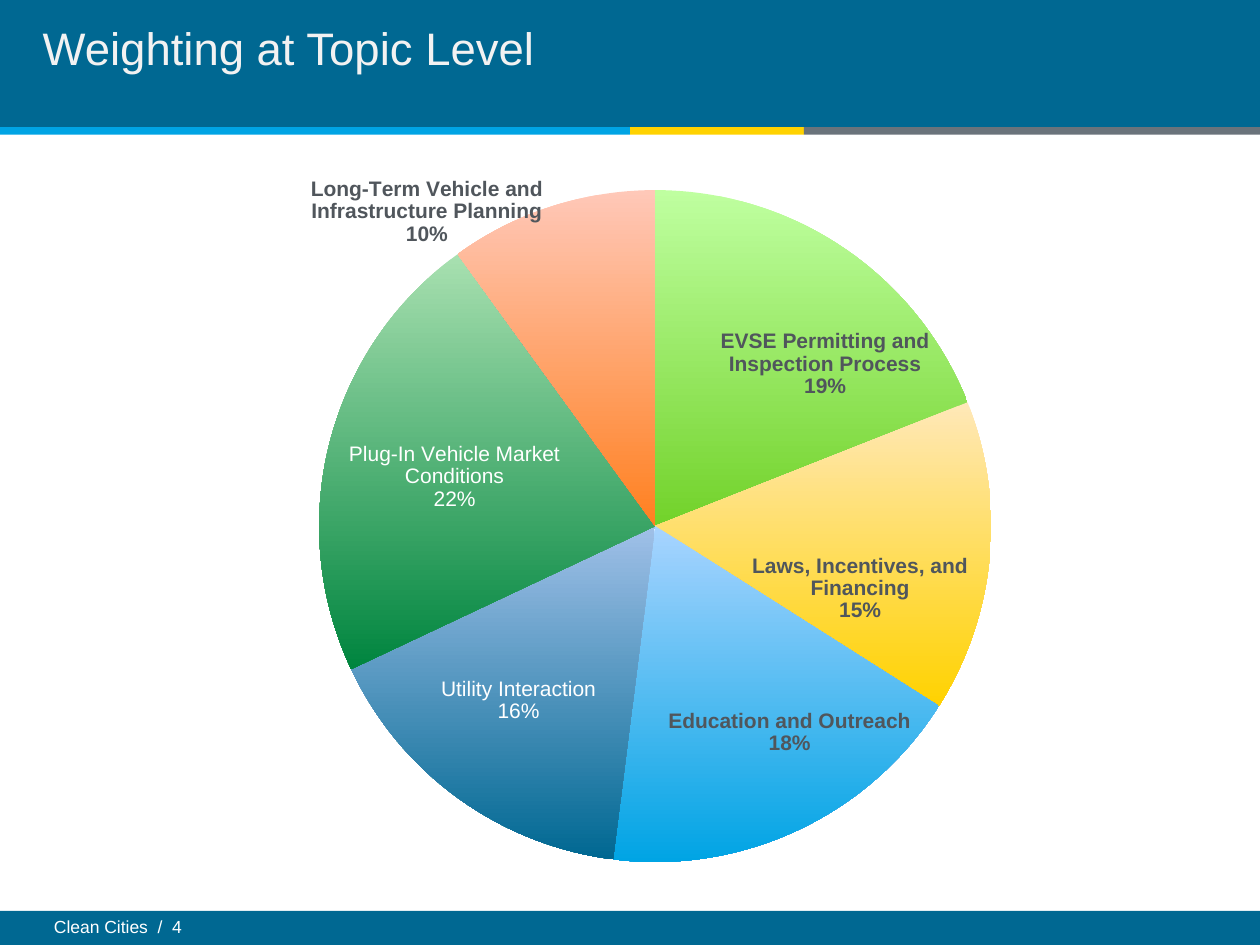
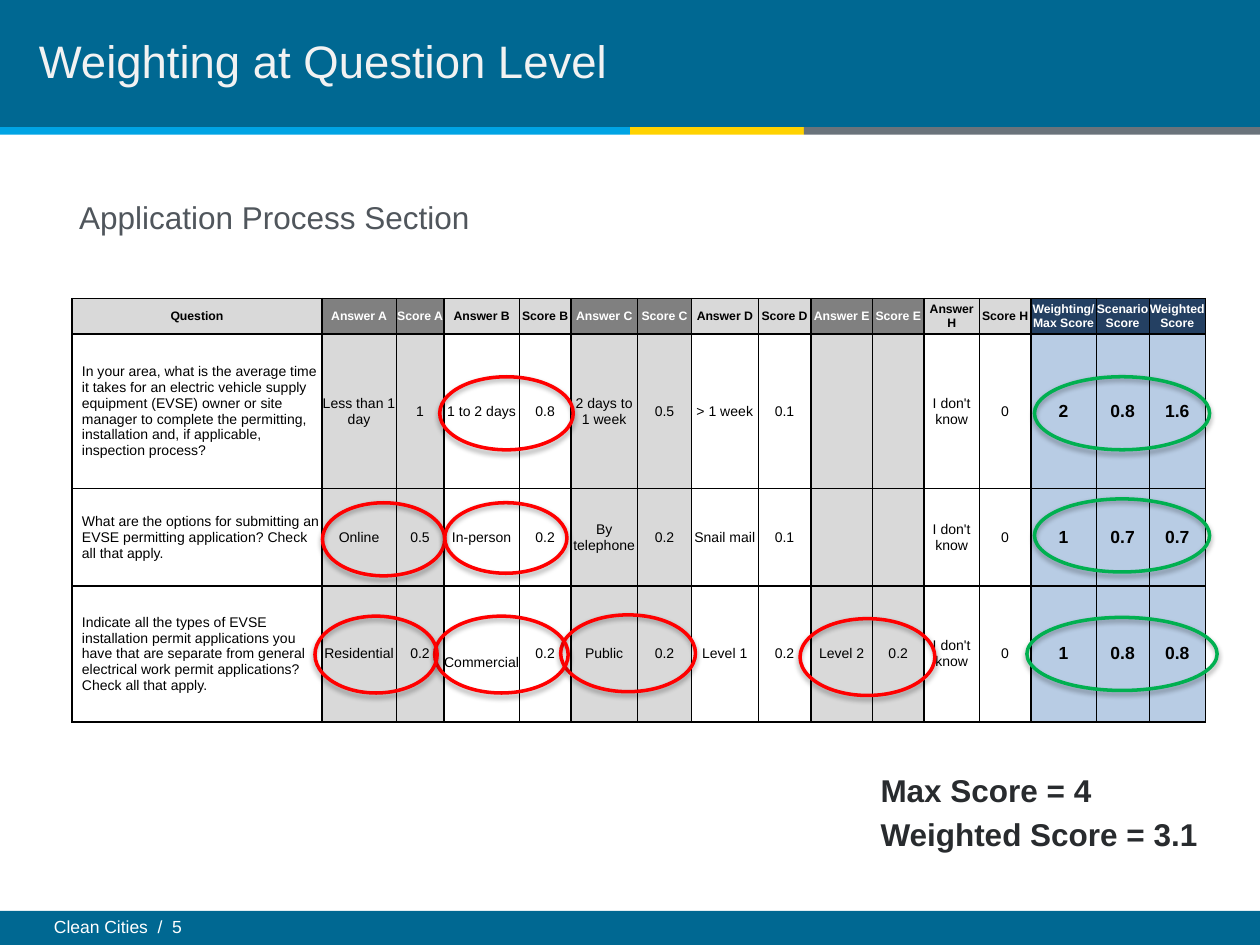
from lxml.etree import SubElement
from pptx import Presentation
from pptx.chart.data import CategoryChartData
from pptx.dml.color import RGBColor
from pptx.enum.chart import XL_CHART_TYPE, XL_LABEL_POSITION
from pptx.enum.shapes import MSO_SHAPE
from pptx.enum.text import MSO_ANCHOR, PP_ALIGN
from pptx.oxml import parse_xml
from pptx.oxml.ns import nsdecls, qn
from pptx.util import Inches, Pt

WIDTH, HEIGHT = Inches(10), Inches(7.5)
COL, ROW = WIDTH / 100, HEIGHT / 75

TEAL = RGBColor(0x00, 0x68, 0x92)
SKY = RGBColor(0x00, 0xA4, 0xE4)
YELLOW = RGBColor(0xFF, 0xD2, 0x00)
SLATE = RGBColor(0x6A, 0x73, 0x7B)
WHITE = RGBColor(0xFF, 0xFF, 0xFF)
BLACK = RGBColor(0x00, 0x00, 0x00)
TITLE_GREY = RGBColor(0xF2, 0xF2, 0xF2)
TEXT_GREY = RGBColor(0x50, 0x56, 0x5C)
DARK_GREY = RGBColor(0x28, 0x2B, 0x2E)
LIGHT_CELL = RGBColor(0xD9, 0xD9, 0xD9)
MID_CELL = RGBColor(0x80, 0x80, 0x80)
NAVY = RGBColor(0x24, 0x40, 0x62)
PALE_BLUE = RGBColor(0xB8, 0xCC, 0xE4)
RED = RGBColor(0xFF, 0x00, 0x00)
GREEN = RGBColor(0x00, 0xB0, 0x50)
LIME_TOP, LIME = RGBColor(0xBF, 0xFF, 0xA0), RGBColor(0x72, 0xD2, 0x2A)
SAND_TOP = RGBColor(0xFF, 0xE8, 0xB8)
SKY_TOP = RGBColor(0xA8, 0xD4, 0xFF)
TEAL_TOP = RGBColor(0xA0, 0xC0, 0xE8)
FOREST_TOP, FOREST = RGBColor(0xA8, 0xE0, 0xB0), RGBColor(0x00, 0x85, 0x3F)
ORANGE_TOP, ORANGE = RGBColor(0xFF, 0xC8, 0xB8), RGBColor(0xFF, 0x80, 0x20)

TOPICS = [
    ("EVSE Permitting and Inspection Process", 19, LIME_TOP, LIME, TEXT_GREY, (0.06, -0.03)),
    ("Laws, Incentives, and Financing", 15, SAND_TOP, YELLOW, TEXT_GREY, (0.03, 0.06)),
    ("Education and Outreach", 18, SKY_TOP, SKY, TEXT_GREY, (0.05, 0.07)),
    ("Utility Interaction", 16, TEAL_TOP, TEAL, WHITE, (-0.03, 0.05)),
    ("Plug-In Vehicle Market Conditions", 22, FOREST_TOP, FOREST, WHITE, (-0.03, -0.01)),
    ("Long-Term Vehicle and Infrastructure Planning", 10, ORANGE_TOP, ORANGE, TEXT_GREY,
     (-0.14, -0.2)),
]

COLUMN_WIDTHS = [19.9, 5.9, 3.8, 6, 4.1, 5.3, 4.3, 5.3, 4.2, 4.9, 4.1, 4.4, 4.1, 5.2, 4.2, 4.5]
ROW_HEIGHTS = [2.8, 12.3, 7.7, 10.8]
HEADINGS = ["Question"] + [f"{kind} {letter}" for letter in "ABCDEH" for kind in ("Answer", "Score")]
HEADINGS += ["Weighting/ Max Score", "Scenario Score", "Weighted Score"]
QUESTIONS = [
    ["In your area, what is the average time it takes for an electric vehicle supply equipment "
     "(EVSE) owner or site manager to complete the permitting, installation and, if applicable, "
     "inspection process?",
     "Less than 1 day", "1", "1 to 2 days", "0.8", "2 days to 1 week", "0.5", "> 1 week", "0.1",
     "", "", "I don't know", "0", "2", "0.8", "1.6"],
    ["What are the options for submitting an EVSE permitting application? Check all that apply.",
     "Online", "0.5", "In-person", "0.2", "By telephone", "0.2", "Snail mail", "0.1",
     "", "", "I don't know", "0", "1", "0.7", "0.7"],
    ["Indicate all the types of EVSE installation permit applications you have that are separate "
     "from general electrical work permit applications? Check all that apply.",
     "Residential", "0.2", "Commercial", "0.2", "Public", "0.2", "Level 1", "0.2",
     "Level 2", "0.2", "I don't know", "0", "1", "0.8", "0.8"],
]
SHADED_COLUMNS = {1, 2, 5, 6, 9, 10}
FIRST_RESULT = 13
THIN_LEFT = {2, 4, 6, 8, 10, 12, 14, 15}
THIN_TOP = {2}
LOWERED_CELL = (3, 3)

ANSWER_RINGS = [(19.9, 16.2, 9.7, 5.8), (29.2, 6.2, 10.6, 5.8), (29.6, 16.2, 9.7, 5.6),
                (38.8, 25.1, 10.7, 6.1), (28.8, 25.2, 10.6, 6.1), (57.8, 25.4, 10.7, 6.1),
                (19.3, 25.2, 9.7, 6.1)]
RESULT_RINGS = [(76.4, 6.2, 13.9, 5.8), (76.4, 15.9, 13.9, 5.8), (75.8, 25.3, 15.1, 5.8)]


def place(box):
    """Turn a box in columns and rows into slide lengths."""
    x, y, w, h = box
    return round(x * COL), round(y * ROW), round(w * COL), round(h * ROW)


def add_run(p, text, size, color, bold=False):
    """Add one Arial run to a paragraph."""
    r = p.add_run()
    r.text = text
    font = r.font
    font.name, font.size, font.bold = "Arial", Pt(size), bold
    font.color.rgb = color


def add_text(s, box, lines, size, color, bold=False, anchor=MSO_ANCHOR.TOP, spacing=None):
    """Place a text box with one paragraph per line."""
    tf = s.shapes.add_textbox(*place(box)).text_frame
    tf.word_wrap, tf.vertical_anchor = True, anchor
    for i, line in enumerate(lines):
        p = tf.paragraphs[0] if i == 0 else tf.add_paragraph()
        if i:
            p.space_before = Pt(size * 0.2)
        p.line_spacing = spacing
        add_run(p, line, size, color, bold)


def add_band(s, box, color):
    """Place a plain filled rectangle."""
    sp = s.shapes.add_shape(MSO_SHAPE.RECTANGLE, *place(box))
    sp.shadow.inherit = False
    sp.fill.solid()
    sp.fill.fore_color.rgb = color
    sp.line.fill.background()


def add_frame(prs, number, title, title_box):
    """Start a slide with its bands, footer and title."""
    s = prs.slides.add_slide(prs.slide_layouts[6])
    add_band(s, (0, 0, 100, 10.1), TEAL)
    add_band(s, (0, 72.3, 100, 2.7), TEAL)
    add_text(s, (3.3, 72.4, 77.8, 2.6), [f"Clean Cities  /  {number}"], 10, WHITE, spacing=0.9)
    left = 0
    for width, color in ((50, SKY), (13.8, YELLOW), (36.2, SLATE)):
        add_band(s, (left, 10.1, width, 0.6), color)
        left += width
    add_text(s, title_box, [title], 26, TITLE_GREY, anchor=MSO_ANCHOR.MIDDLE, spacing=Pt(28))
    return s


def manual_layout(**values):
    """Build a chart layout element from its settings."""
    layout = parse_xml(f"<c:layout {nsdecls('c')}><c:manualLayout/></c:layout>")
    for name, value in values.items():
        SubElement(layout[0], qn(f"c:{name}")).set("val", str(value))
    return layout


def style_slice(point, top, bottom, label_color):
    """Give a slice its gradient and its label font."""
    fill = point.format.fill
    fill.gradient()
    fill.gradient_angle = 270
    for stop, color in zip(fill.gradient_stops, (top, bottom)):
        stop.color.rgb = color
    label = point.data_label
    font = label.font
    font.name, font.size, font.bold = "Arial", Pt(12), label_color != WHITE
    font.color.rgb = label_color
    label.position = XL_LABEL_POSITION.CENTER


def add_topic_pie(s, box):
    """Draw the pie of topic weights."""
    data = CategoryChartData()
    data.categories = [topic[0] for topic in TOPICS]
    data.add_series("Series 1", [topic[1] for topic in TOPICS])
    chart = s.shapes.add_chart(XL_CHART_TYPE.PIE, *place(box), data).chart
    chart.has_title = chart.has_legend = False
    chart.font.name, chart.font.size = "Arial", Pt(10)
    chart.font.color.rgb = TEXT_GREY
    area = chart._chartSpace.chart.plotArea
    for old in area.findall(qn("c:layout")):
        area.remove(old)
    area.insert(0, manual_layout(layoutTarget="inner", xMode="edge", yMode="edge",
                                 x=0.24, y=0.07, w=0.56, h=0.87))
    series = chart.plots[0].series[0]
    for i, (_, _, top, bottom, label_color, _) in enumerate(TOPICS):
        style_slice(series.points[i], top, bottom, label_color)
    for label, topic in zip(series._element.xpath(".//c:dLbl"), TOPICS):
        dx, dy = topic[-1]
        label.insert(1, manual_layout(x=dx, y=dy))
        for flag, value in (("showVal", "0"), ("showCatName", "1"), ("showPercent", "1")):
            label.find(qn(f"c:{flag}")).set("val", value)
        SubElement(label, qn("c:separator")).text = "\n"
    for leader in series._element.xpath(".//c:showLeaderLines"):
        leader.set("val", "0")


def cell_style(row, col):
    """Return fill, text colour, size and boldness of a cell."""
    shaded, result = col in SHADED_COLUMNS, col >= FIRST_RESULT
    if row == 0:
        fill = NAVY if result else MID_CELL if shaded else LIGHT_CELL
        return fill, WHITE if shaded or result else BLACK, 7, True
    fill = PALE_BLUE if result else LIGHT_CELL if shaded else WHITE
    return fill, BLACK, 10 if result else 8, result


def add_borders(cell, row, col):
    """Draw the four black borders of a cell."""
    thin = {"lnL": col in THIN_LEFT, "lnR": col + 1 in THIN_LEFT,
            "lnT": row in THIN_TOP, "lnB": row + 1 in THIN_TOP}
    props = cell._tc.get_or_add_tcPr()
    for i, (side, is_thin) in enumerate(thin.items()):
        props.insert(i, parse_xml(
            f'<a:{side} {nsdecls("a")} w="{Pt(0.5 if is_thin else 1)}"><a:solidFill>'
            f'<a:srgbClr val="{BLACK}"/></a:solidFill></a:{side}>'))


def add_question_table(s, box):
    """Build the table of answers and scores."""
    table = s.shapes.add_table(len(ROW_HEIGHTS), len(COLUMN_WIDTHS), *place(box)).table
    table.first_row = table.horz_banding = False
    scale = box[2] / sum(COLUMN_WIDTHS)
    for column, width in zip(table.columns, COLUMN_WIDTHS):
        column.width = round(width * scale * COL)
    for table_row, height in zip(table.rows, ROW_HEIGHTS):
        table_row.height = round(height * ROW)
    for row, texts in enumerate([HEADINGS] + QUESTIONS):
        for col, text in enumerate(texts):
            cell = table.cell(row, col)
            question = row > 0 and col == 0
            fill, color, size, bold = cell_style(row, col)
            cell.margin_left = Inches(0.08) if question else 0
            cell.margin_right = cell.margin_bottom = 0
            cell.margin_top = Inches(0.13) if (row, col) == LOWERED_CELL else 0
            cell.vertical_anchor = MSO_ANCHOR.MIDDLE
            cell.fill.solid()
            cell.fill.fore_color.rgb = fill
            add_borders(cell, row, col)
            p = cell.text_frame.paragraphs[0]
            p.alignment = PP_ALIGN.LEFT if question else PP_ALIGN.CENTER
            if text:
                add_run(p, text, size, color, bold)


def add_rings(s, table_box, rings, color):
    """Circle parts of the table with shadowed ellipses."""
    for x, y, w, h in rings:
        sp = s.shapes.add_shape(MSO_SHAPE.OVAL,
                                *place((table_box[0] + x, table_box[1] + y, w, h)))
        sp.fill.background()
        sp.line.color.rgb, sp.line.width = color, Pt(2)
        sp._element.spPr.append(parse_xml(
            f'<a:effectLst {nsdecls("a")}><a:outerShdw blurRad="{Pt(3.1)}" dist="{Pt(1.8)}" '
            f'dir="5400000" rotWithShape="0"><a:srgbClr val="{BLACK}"><a:alpha val="35000"/>'
            '</a:srgbClr></a:outerShdw></a:effectLst>'))


def build_topic_slide(prs):
    """Build the slide on topic weights."""
    s = add_frame(prs, 4, "Weighting at Topic Level", (2.4, 0.8, 88.5, 6.4))
    add_topic_pie(s, (0, 10.8, 100, 61.3))


def build_question_slide(prs):
    """Build the slide on question weights."""
    s = add_frame(prs, 5, "Weighting at Question Level", (2.1, 1.8, 90, 6.4))
    table_box = (5.7, 23.7, 90, 33.6)
    add_question_table(s, table_box)
    add_text(s, (5.3, 15.2, 40, 4), ["Application Process Section"], 18, TEXT_GREY)
    add_rings(s, table_box, ANSWER_RINGS, RED)
    add_rings(s, table_box, RESULT_RINGS, GREEN)
    add_text(s, (68.9, 60.7, 30, 7.5), ["Max Score = 4", "Weighted Score = 3.1"], 18, DARK_GREY,
             bold=True)


def main():
    """Build and save the presentation."""
    prs = Presentation()
    prs.slide_width, prs.slide_height = WIDTH, HEIGHT
    build_topic_slide(prs)
    build_question_slide(prs)
    prs.save("out.pptx")


if __name__ == "__main__":
    main()
